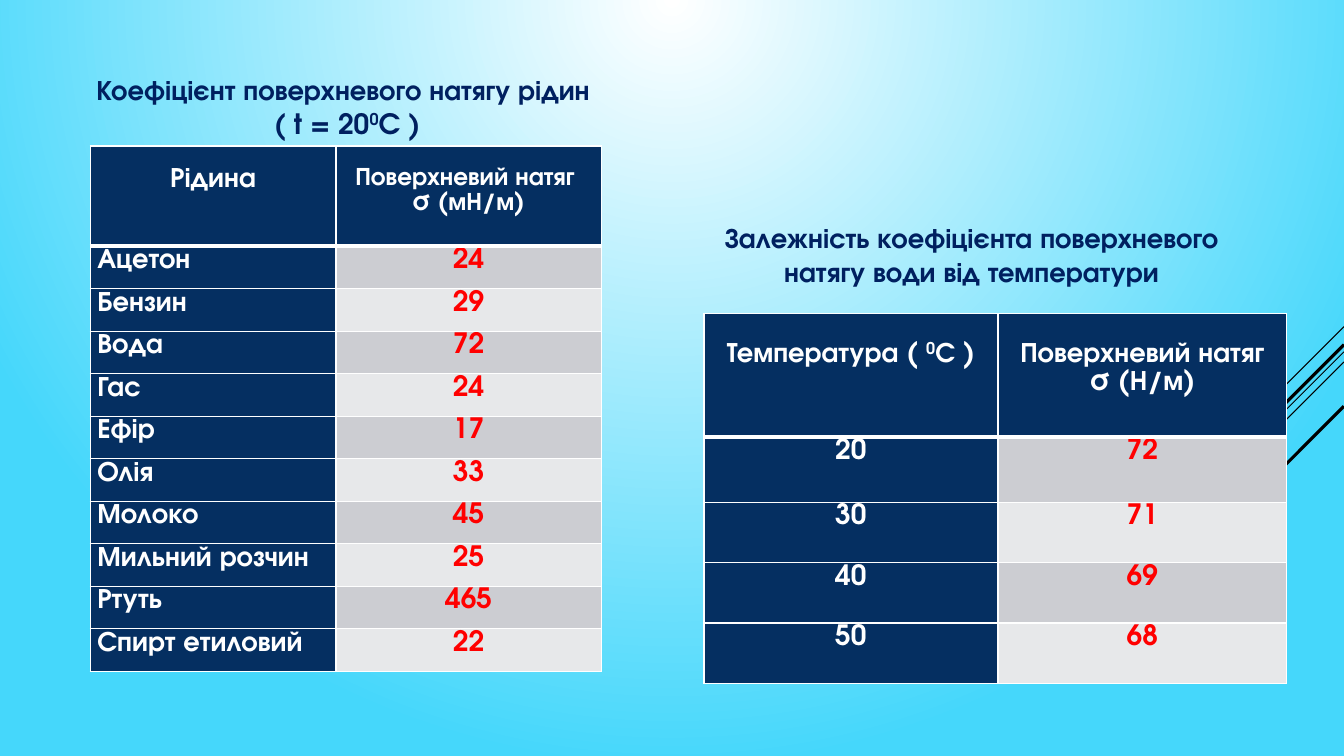
from lxml.etree import SubElement
from pptx import Presentation
from pptx.dml.color import RGBColor
from pptx.enum.shapes import MSO_CONNECTOR
from pptx.enum.text import MSO_AUTO_SIZE, PP_ALIGN
from pptx.oxml.ns import qn
from pptx.util import Pt

WHITE = RGBColor(0xFF, 0xFF, 0xFF)
BLACK = RGBColor(0x00, 0x00, 0x00)
SKY = RGBColor(0x45, 0xD7, 0xFB)
NAVY = RGBColor(0x05, 0x2F, 0x61)
TITLE_BLUE = RGBColor(0x00, 0x20, 0x60)
RED = RGBColor(0xFF, 0x00, 0x00)
BANDS = (RGBColor(0xCC, 0xCD, 0xD2), RGBColor(0xE7, 0xE8, 0xEA))

SLIDE_WIDTH, SLIDE_HEIGHT = 960, 540
STRIPES = (
    (233.3, 72, 0.75),
    (251.3, 234.7, 0.75),
    (258.5, 149, 0.75),
    (246.2, 137.5, 2.25),
    (290.2, 100, 2.25),
)
LIQUIDS = (
    ("Ацетон", "24"),
    ("Бензин", "29"),
    ("Вода", "72"),
    ("Гас", "24"),
    ("Ефір", "17"),
    ("Олія", "33"),
    ("Молоко", "45"),
    ("Мильний розчин", "25"),
    ("Ртуть", "465"),
    ("Спирт етиловий", "22"),
)
WATER = (("20", "72"), ("30", "71"), ("40", "69"), ("50", "68"))


class SlideBuilder:
    """Draws styled elements on the current slide, with lengths in points."""

    def __init__(self, slide, font_name):
        self.slide = slide
        self.font_name = font_name

    def background(self, inner, outer):
        fill = self.slide.background.fill
        fill.gradient()
        for stop, color, position in zip(fill.gradient_stops, (inner, outer), (0, 1)):
            stop.color.rgb = color
            stop.position = position
        gradient = self.slide.background._cSld.find(".//" + qn("a:gradFill"))
        gradient.remove(gradient.find(qn("a:lin")))
        circle = SubElement(gradient, qn("a:path"), {"path": "circle"})
        SubElement(circle, qn("a:fillToRect"), {"b": "100000"})

    def stripe(self, top, reach, width):
        line = self.slide.shapes.add_connector(
            MSO_CONNECTOR.STRAIGHT,
            Pt(SLIDE_WIDTH), Pt(top), Pt(SLIDE_WIDTH - reach), Pt(top + reach),
        )
        line.line.color.rgb = BLACK
        line.line.width = Pt(width)
        SubElement(line._element.spPr, qn("a:effectLst"))

    def fill_text(self, text_frame, text, color, size=20, align=PP_ALIGN.CENTER, spacing=None):
        for index, line in enumerate(text.split("\n")):
            paragraph = text_frame.add_paragraph() if index else text_frame.paragraphs[0]
            paragraph.alignment = align
            paragraph.line_spacing = spacing
            base, *pieces = line.split("^")
            paragraph.text = base
            for piece in pieces:
                paragraph.add_run().text = piece
            for number, run in enumerate(paragraph.runs):
                run.font.name = self.font_name
                run.font.size = Pt(size)
                run.font.bold = True
                run.font.color.rgb = color
                if number % 2:
                    run._r.get_or_add_rPr().set("baseline", "30000")

    def title(self, left, top, width, height, text):
        shape = self.slide.shapes.add_textbox(Pt(left), Pt(top), Pt(width), Pt(height))
        shape.text_frame.word_wrap = True
        shape.text_frame.auto_size = MSO_AUTO_SIZE.SHAPE_TO_FIT_TEXT
        self.fill_text(shape.text_frame, text, TITLE_BLUE)

    def cell(self, cell, text, fill, color, bottom=1, margin_top=0, **text_style):
        cell.margin_left = cell.margin_right = Pt(5)
        cell.margin_top, cell.margin_bottom = Pt(margin_top), Pt(0)
        properties = cell._tc.get_or_add_tcPr()
        for side, width in (("L", 1), ("R", 1), ("T", 1), ("B", bottom)):
            border = SubElement(properties, qn(f"a:ln{side}"), {"w": str(Pt(width))})
            paint = SubElement(border, qn("a:solidFill"))
            SubElement(paint, qn("a:srgbClr"), {"val": str(WHITE)})
        cell.fill.solid()
        cell.fill.fore_color.rgb = fill
        self.fill_text(cell.text_frame, text, color, spacing=1.07, **text_style)

    def table(self, left, top, widths, heights, headers, rows, header_inset, label_align):
        table = self.slide.shapes.add_table(
            len(heights), len(widths), Pt(left), Pt(top), Pt(sum(widths)), Pt(sum(heights))
        ).table
        for column, width in zip(table.columns, widths):
            column.width = Pt(width)
        for row, height in zip(table.rows, heights):
            row.height = Pt(height)
        for index, (text, size) in enumerate(headers):
            self.cell(table.cell(0, index), text, NAVY, WHITE,
                      bottom=3, margin_top=header_inset, size=size)
        for index, (label, value) in enumerate(rows, 1):
            self.cell(table.cell(index, 0), label, NAVY, WHITE, align=label_align)
            self.cell(table.cell(index, 1), value, BANDS[(index - 1) % 2], RED)


def main():
    presentation = Presentation()
    presentation.slide_width, presentation.slide_height = Pt(SLIDE_WIDTH), Pt(SLIDE_HEIGHT)
    slide = presentation.slides.add_slide(presentation.slide_layouts[6])
    builder = SlideBuilder(slide, "TeX Gyre Adventor")
    builder.background(WHITE, SKY)
    for stripe in STRIPES:
        builder.stripe(*stripe)
    builder.table(
        64.5, 104.3, (175.5, 189.5), [71.6] + [30.36] * len(LIQUIDS),
        (("Рідина", 20), ("Поверхневий натяг \nσ (мН/м)", 18)),
        LIQUIDS, 13.5, PP_ALIGN.LEFT,
    )
    builder.title(26.6, 48.2, 442.8, 55.4,
                  "Коефіцієнт поверхневого натягу рідин \n( t = 20^0^C )")
    builder.table(
        502.8, 224, (210, 206.4), [88, 46.8] + [43.1] * (len(WATER) - 1),
        (("Температура ( ^0^С )", 20), ("Поверхневий натяг\nσ (Н/м)", 20)),
        WATER, 19, PP_ALIGN.CENTER,
    )
    builder.title(469.4, 154, 449.3, 55.4,
                  "Залежність коефіцієнта поверхневого\nнатягу води від температури")
    presentation.save("out.pptx")


if __name__ == "__main__":
    main()
